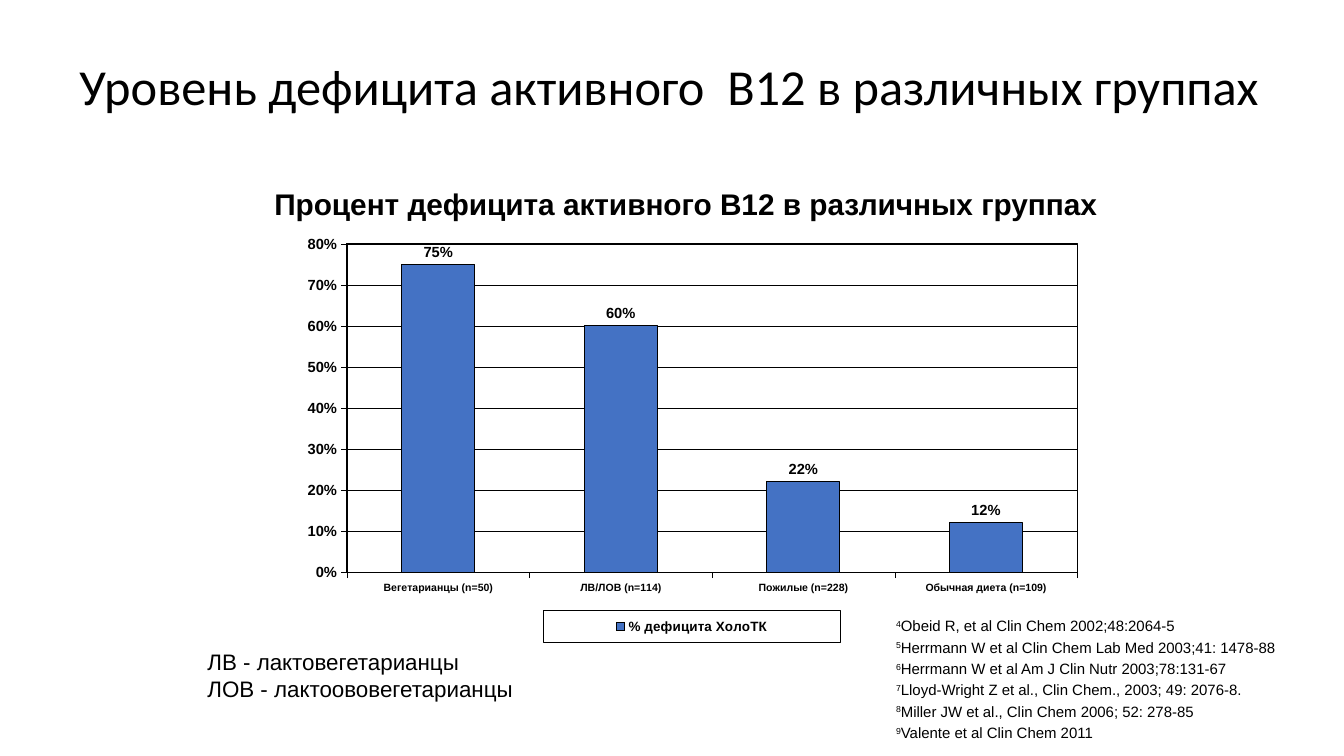
"""Build a slide with a column chart of active B12 deficiency by group."""
from lxml import etree
from pptx import Presentation
from pptx.chart.data import CategoryChartData
from pptx.dml.color import RGBColor
from pptx.enum.chart import XL_CHART_TYPE, XL_LABEL_POSITION, XL_LEGEND_POSITION, XL_TICK_MARK
from pptx.enum.text import MSO_ANCHOR, PP_ALIGN
from pptx.oxml import parse_xml
from pptx.oxml.ns import nsdecls, qn
from pptx.util import Pt

COLUMNS = XL_CHART_TYPE.COLUMN_CLUSTERED
OUTSIDE_END = XL_LABEL_POSITION.OUTSIDE_END
LEGEND_BOTTOM = XL_LEGEND_POSITION.BOTTOM
TICK_OUT = XL_TICK_MARK.OUTSIDE
TOP, MIDDLE = MSO_ANCHOR.TOP, MSO_ANCHOR.MIDDLE
LEFT, CENTER = PP_ALIGN.LEFT, PP_ALIGN.CENTER

TITLE = "Уровень дефицита активного  B12 в различных группах"
HEADING = "Процент дефицита активного B12 в различных группах "
SERIES = "% дефицита ХолоТК"
GROUPS = {
    "Вегетарианцы (n=50)": 0.75,
    "ЛВ/ЛОВ (n=114)": 0.60,
    "Пожилые (n=228)": 0.22,
    "Обычная диета (n=109)": 0.12,
}
ABBREVIATIONS = ["ЛВ - лактовегетарианцы", "ЛОВ - лактоововегетарианцы"]
FIRST_REFERENCE = 4
REFERENCES = [
    "Obeid R, et al Clin Chem 2002;48:2064-5",
    "Herrmann W et al Clin Chem Lab Med 2003;41: 1478-88",
    "Herrmann W et al Am J Clin Nutr 2003;78:131-67",
    "Lloyd-Wright Z et al., Clin Chem., 2003; 49: 2076-8.",
    "Miller JW et al., Clin Chem 2006; 52: 278-85",
    "Valente et al Clin Chem 2011",
]

THEME = {
    "ink": RGBColor(0, 0, 0),
    "bar": RGBColor(0x44, 0x72, 0xC4),
    "title_font": "Calibri",
    "body_font": "Arial",
    "title": 36,
    "heading": 21.3,
    "abbreviation": 16,
    "reference": 10.7,
    "chart": 13.5,
    "value": 10.5,
    "category": 7.5,
    "legend": 9.6,
    "hairline": 0.19,
    "outline": 0.75,
}
PLACES = {
    "title": (49.7, 28, 864, 72),
    "heading": (151.2, 132.5, 683.3, 26),
    "chart": (178.6, 153.4, 629.3, 309.6),
    "abbreviation": (141.1, 459.4, 235.4, 46),
    "reference": (640.1, 442.1, 272.9, 89.3),
}
PLOT_LAYOUT = {"x": 0.11, "y": 0.067, "w": 0.829, "h": 0.758}
LEGEND_LAYOUT = {"x": 0.333, "y": 0.914, "w": 0.337, "h": 0.072}


def apply(target, values):
    for name, value in values.items():
        setattr(target, name, value)


def style_font(font, role, bold=False, face="body_font"):
    apply(font, {"name": THEME[face], "size": Pt(THEME[role]), "bold": bold})
    font.color.rgb = THEME["ink"]


def place(role):
    return [Pt(length) for length in PLACES[role]]


def add_text(page, role, lines, inset=(0, 0), anchor=TOP, wrap=True, bold=False,
             face="body_font", para_format=None):
    """Write lines, each a list of (text, baseline) spans, in one text box."""
    frame = page.shapes.add_textbox(*place(role)).text_frame
    side, edge = map(Pt, inset)
    apply(frame, {"word_wrap": wrap, "vertical_anchor": anchor, "margin_left": side,
                  "margin_right": side, "margin_top": edge, "margin_bottom": edge})
    for index, line in enumerate(lines):
        para = frame.add_paragraph() if index else frame.paragraphs[0]
        apply(para, {"alignment": LEFT, **(para_format or {})})
        for text, baseline in line:
            span = para.add_run()
            span.text = text
            style_font(span.font, role, bold, face)
            if baseline:
                span.font._element.set("baseline", str(baseline))
    return frame


def style_line(line, width):
    line.color.rgb = THEME["ink"]
    line.width = Pt(THEME[width])


def make_layout(fractions, inner=False):
    layout = parse_xml(f'<c:layout {nsdecls("c")}><c:manualLayout/></c:layout>')
    modes = {"layoutTarget": "inner"} if inner else {}
    modes.update(xMode="edge", yMode="edge")
    for tag, value in {**modes, **fractions}.items():
        etree.SubElement(layout[0], qn(f"c:{tag}")).set("val", str(value))
    return layout


def make_border(width):
    return parse_xml(
        f'<c:spPr {nsdecls("c", "a")}><a:noFill/><a:ln w="{Pt(THEME[width])}"><a:solidFill>'
        f'<a:srgbClr val="{THEME["ink"]}"/></a:solidFill></a:ln></c:spPr>')


def add_group_chart(page):
    data = CategoryChartData(number_format="0%")
    data.categories = list(GROUPS)
    data.add_series(SERIES, list(GROUPS.values()))
    chart = page.shapes.add_chart(COLUMNS, *place("chart"), data).chart
    apply(chart, {"has_title": False, "has_legend": True})
    style_font(chart.font, "chart", True)

    for axis, role in ((chart.category_axis, "category"), (chart.value_axis, "value")):
        axis.major_tick_mark = TICK_OUT
        style_font(axis.tick_labels.font, role, True)
        style_line(axis.format.line, "hairline")
    scale = chart.value_axis
    apply(scale, {"minimum_scale": 0, "maximum_scale": 0.8, "major_unit": 0.1})
    apply(scale.tick_labels, {"number_format": "0%", "number_format_is_linked": False})
    style_line(scale.major_gridlines.format.line, "hairline")

    plot = chart.plots[0]
    apply(plot, {"gap_width": 150, "vary_by_categories": False, "has_data_labels": True})
    apply(plot.data_labels, {"show_value": True, "position": OUTSIDE_END,
                             "number_format": "0%", "number_format_is_linked": False})
    style_font(plot.data_labels.font, "value", True)
    bars = plot.series[0].format
    bars.fill.solid()
    bars.fill.fore_color.rgb = THEME["bar"]
    style_line(bars.line, "outline")

    legend = chart.legend
    apply(legend, {"position": LEGEND_BOTTOM, "include_in_layout": False})
    style_font(legend.font, "legend", True)
    legend_box = legend._element
    legend_box.find(qn("c:legendPos")).addnext(make_layout(LEGEND_LAYOUT))
    legend_box.find(qn("c:txPr")).addprevious(make_border("outline"))

    plot_area = chart._chartSpace.chart.plotArea
    for layout in plot_area.findall(qn("c:layout")):
        plot_area.remove(layout)
    plot_area.insert(0, make_layout(PLOT_LAYOUT, inner=True))
    plot_area.append(make_border("outline"))


def main():
    deck = Presentation()
    apply(deck, {"slide_width": Pt(960), "slide_height": Pt(540)})
    page = deck.slides.add_slide(deck.slide_layouts[6])
    add_text(page, "title", [[(TITLE, 0)]], inset=(7.2, 3.6), anchor=MIDDLE,
             face="title_font", para_format={"line_spacing": 0.9})
    add_group_chart(page)
    references = [[(str(number), 30000), (text, 0)]
                  for number, text in enumerate(REFERENCES, FIRST_REFERENCE)]
    add_text(page, "reference", references, wrap=False,
             para_format={"line_spacing": 0.9, "space_after": Pt(3.7)})
    add_text(page, "heading", [[(HEADING, 0)]], bold=True, para_format={"alignment": CENTER})
    add_text(page, "abbreviation", [[(text, 0)] for text in ABBREVIATIONS],
             inset=(7.2, 3.6), wrap=False)
    deck.save("out.pptx")


if __name__ == "__main__":
    main()
